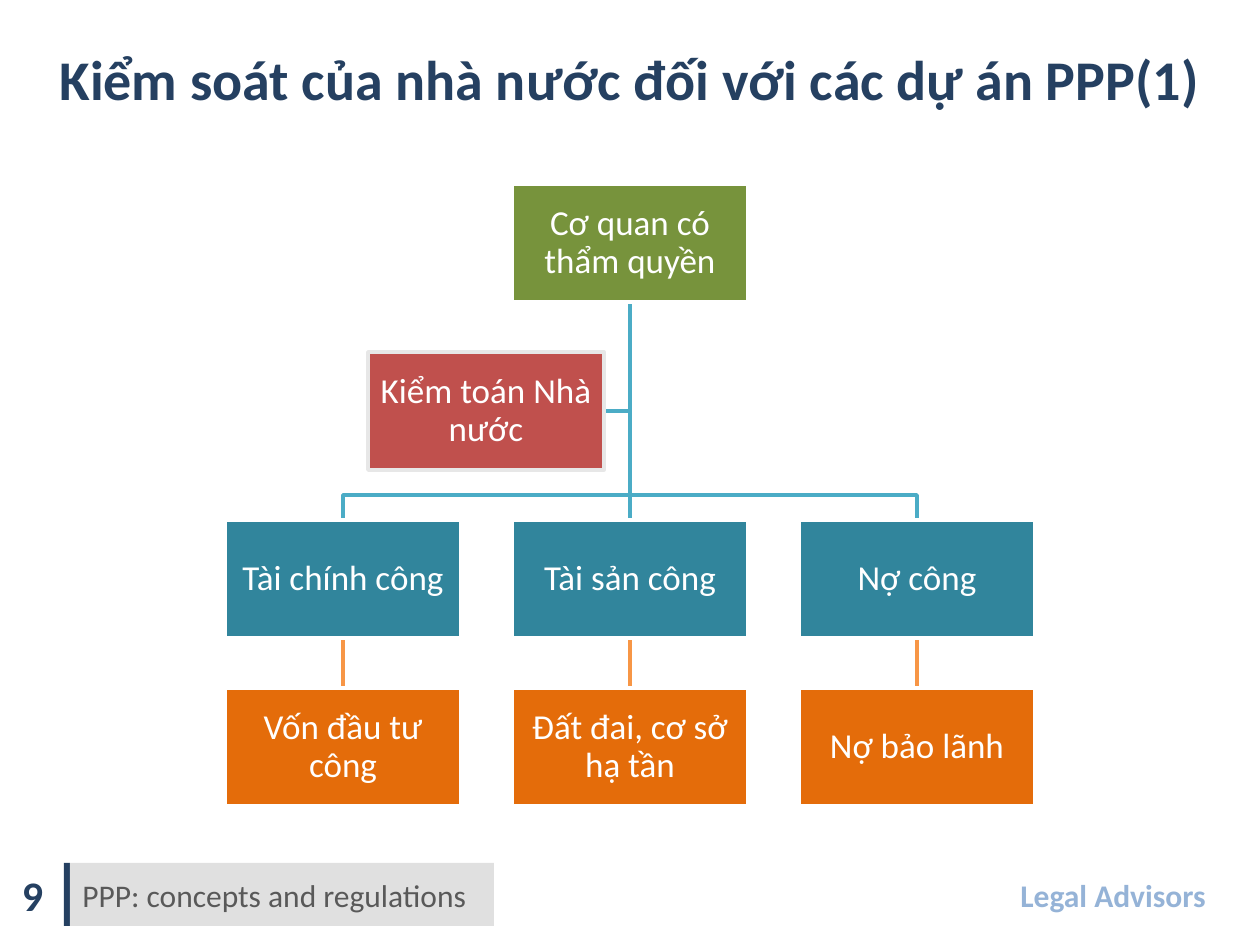
from dataclasses import dataclass

from lxml import etree
from pptx import Presentation
from pptx import util as u
from pptx.dml.color import RGBColor
from pptx.enum import shapes, text
from pptx.oxml.ns import qn

EMU_PER_PX = 914400 / 126
FONT = "Calibri"
COLORS = {
    "navy": "254061", "green": "77933C", "red": "C0504D", "teal": "31859C",
    "orange": "E46C0A", "teal line": "4BACC6", "orange line": "F79646",
    "white": "FFFFFF", "pale": "E7E7E7", "grey": "D9D9D9",
    "dark grey": "595959", "light blue": "95B3D7",
}

# Chart grid
BOX_WIDTH, BOX_HEIGHT = 236, 118
COLUMNS = [225 + 287 * i for i in range(3)]
ROWS = [184 + 168 * i for i in range(4)]
BRANCH_Y = 495


@dataclass(frozen=True)
class Box:
    label: str
    left: int
    top: int
    fill: str
    line: str = "white"


AGENCY = Box("Cơ quan có thẩm quyền", COLUMNS[1], ROWS[0], "green")
AUDIT = Box("Kiểm toán Nhà nước", 368, ROWS[1], "red", "pale")
SUBJECTS = [("Tài chính công", "Vốn đầu tư công"),
            ("Tài sản công", "Đất đai, cơ sở hạ tần"),
            ("Nợ công", "Nợ bảo lãnh")]


def px(value: int) -> u.Emu:
    return u.Emu(round(value * EMU_PER_PX))


def rgb(name: str) -> RGBColor:
    return RGBColor.from_string(COLORS[name])


def write(shape, content: str, *, size: int, color: str, bold: bool = False,
          align=text.PP_ALIGN.LEFT, anchor=text.MSO_ANCHOR.MIDDLE,
          wrap: bool = True, spacing: float = 1.0, margins=None) -> None:
    frame = shape.text_frame
    frame.auto_size = text.MSO_AUTO_SIZE.NONE
    frame.word_wrap = wrap
    frame.vertical_anchor = anchor
    if margins:
        side, end = margins
        frame.margin_left = frame.margin_right = px(side)
        frame.margin_top = frame.margin_bottom = px(end)
    paragraph = frame.paragraphs[0]
    paragraph.alignment = align
    paragraph.line_spacing = spacing
    run = paragraph.add_run()
    run.text = content
    run.font.name = FONT
    run.font.size = u.Pt(size)
    run.font.bold = bold
    run.font.color.rgb = rgb(color)


def add_rectangle(slide, left: int, top: int, width: int, height: int, fill: str):
    shape = slide.shapes.add_shape(shapes.MSO_SHAPE.RECTANGLE,
                                   px(left), px(top), px(width), px(height))
    shape.shadow.inherit = False
    shape.fill.solid()
    shape.fill.fore_color.rgb = rgb(fill)
    shape.line.fill.background()
    return shape


def add_label(slide, left: int, top: int, width: int, height: int,
              content: str, **style) -> None:
    shape = slide.shapes.add_textbox(px(left), px(top), px(width), px(height))
    write(shape, content, **style)


def add_box(slide, box: Box):
    shape = add_rectangle(slide, box.left, box.top, BOX_WIDTH, BOX_HEIGHT, box.fill)
    shape.line.color.rgb = rgb(box.line)
    shape.line.width = u.Pt(2)
    write(shape, box.label, size=20, color="white", align=text.PP_ALIGN.CENTER,
          spacing=0.9, margins=(6, 1))
    return shape


def style_line(shape, color: str) -> None:
    """Colour a line and send it behind the boxes."""
    shape.line.color.rgb = rgb(color)
    shape.line.width = u.Pt(2)
    shape.element.getparent().insert(2, shape.element)


def add_line(slide, color: str, start: tuple[int, int], end: tuple[int, int]):
    line = slide.shapes.add_connector(shapes.MSO_CONNECTOR.STRAIGHT,
                                      *map(px, start + end))
    etree.SubElement(line.element.spPr, qn("a:effectLst"))
    style_line(line, color)
    return line


def join_down(slide, upper, lower, color: str) -> None:
    line = add_line(slide, color, (0, 0), (0, 0))
    line.begin_connect(upper, 2)
    line.end_connect(lower, 0)


def add_branch(slide, points: list[tuple[int, int]]) -> None:
    builder = slide.shapes.build_freeform(*points[0], scale=EMU_PER_PX)
    builder.add_line_segments(points[1:], close=False)
    branch = builder.convert_to_shape()
    branch.shadow.inherit = False
    branch.fill.background()
    style_line(branch, "teal line")


def add_organisation_chart(slide) -> None:
    center = AGENCY.left + BOX_WIDTH // 2
    agency_bottom = AGENCY.top + BOX_HEIGHT
    agency = add_box(slide, AGENCY)
    audit = add_box(slide, AUDIT)

    # Subjects, each with its item below
    for left, (subject_label, item_label) in zip(COLUMNS, SUBJECTS):
        subject = add_box(slide, Box(subject_label, left, ROWS[2], "teal"))
        item = add_box(slide, Box(item_label, left, ROWS[3], "orange"))
        join_down(slide, subject, item, "orange line")
        if left == AGENCY.left:
            join_down(slide, agency, subject, "teal line")
        else:
            middle = left + BOX_WIDTH // 2
            add_branch(slide, [(center, agency_bottom), (center, BRANCH_Y),
                               (middle, BRANCH_Y), (middle, ROWS[2])])

    # Side link to the audit box
    audit_middle = AUDIT.top + BOX_HEIGHT // 2
    link = add_line(slide, "teal line", (AUDIT.left + BOX_WIDTH, audit_middle),
                    (center, audit_middle))
    link.begin_connect(audit, 3)


def add_footer(slide) -> None:
    top, height = 863, 63
    add_rectangle(slide, 64, top, 6, height, "navy")
    topic = add_rectangle(slide, 70, top, 424, height, "grey")
    fill_color = topic.element.spPr.find(".//" + qn("a:srgbClr"))
    etree.SubElement(fill_color, qn("a:alpha"), val="80000")
    write(topic, "PPP: concepts and regulations", size=18, color="dark grey")
    add_label(slide, 1, top, 63, height, "9", size=24, color="navy", bold=True,
              align=text.PP_ALIGN.CENTER)
    add_label(slide, 1008, top, 223, height, "Legal Advisors", size=18,
              color="light blue", bold=True)


def main() -> None:
    presentation = Presentation()
    presentation.slide_width, presentation.slide_height = px(1260), px(945)
    slide = presentation.slides.add_slide(presentation.slide_layouts[5])

    # Title
    title = slide.shapes.title
    title.left, title.top, title.width, title.height = map(px, (42, 38, 1176, 81))
    write(title, "Kiểm soát của nhà nước đối với các dự án PPP(1)", size=32,
          color="navy", bold=True, align=text.PP_ALIGN.CENTER,
          anchor=text.MSO_ANCHOR.TOP, wrap=False)

    add_organisation_chart(slide)
    add_footer(slide)
    presentation.save("out.pptx")


if __name__ == "__main__":
    main()
